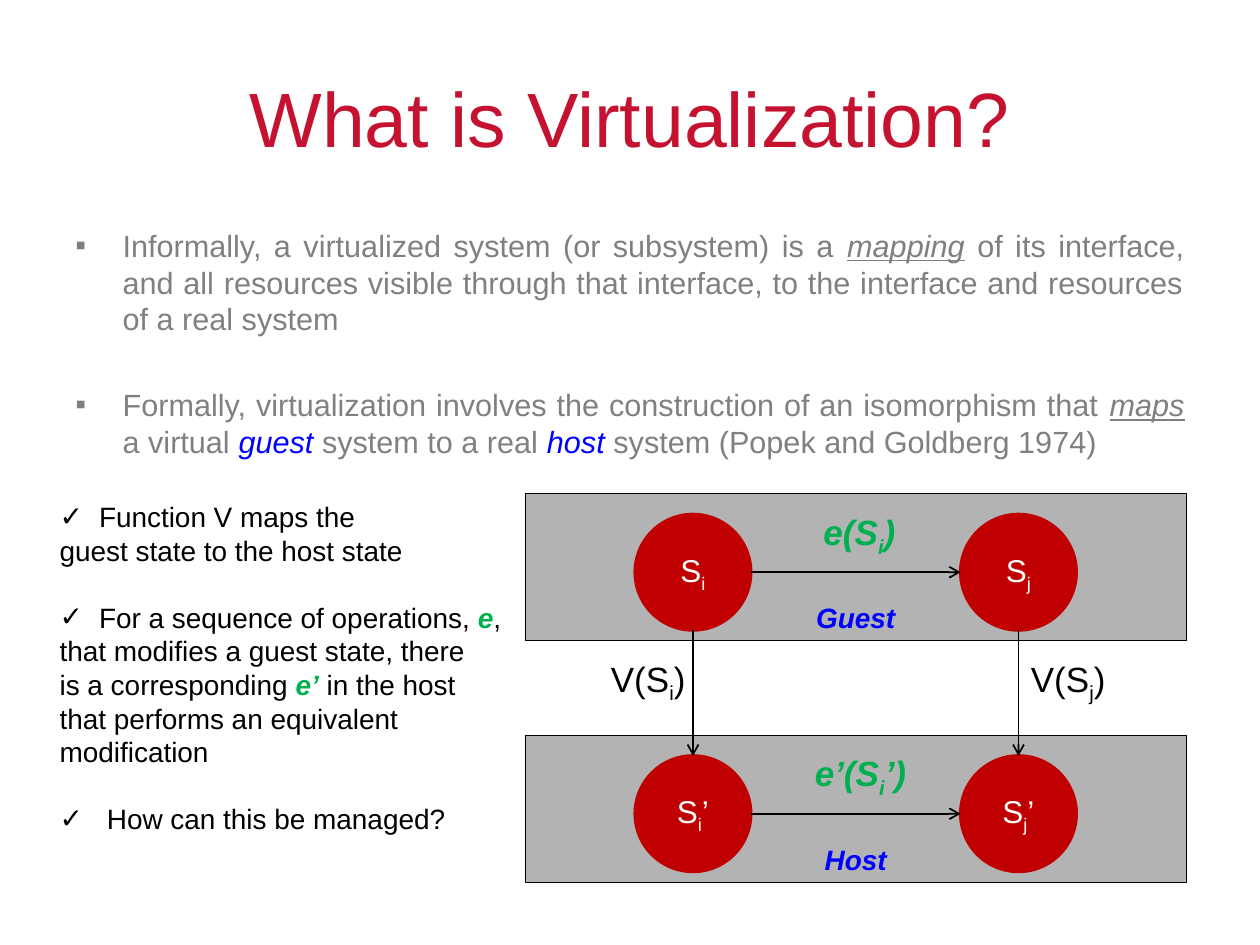
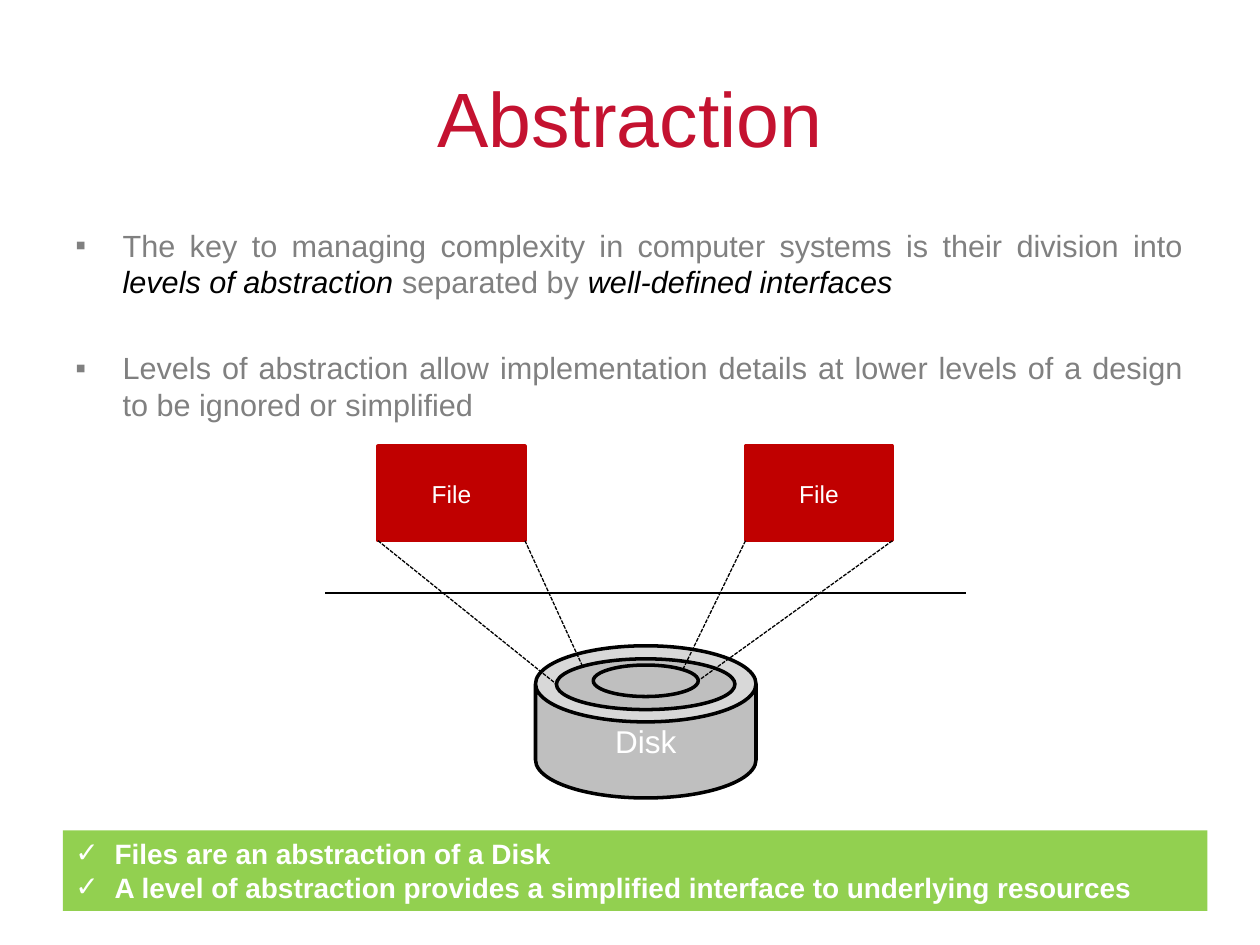
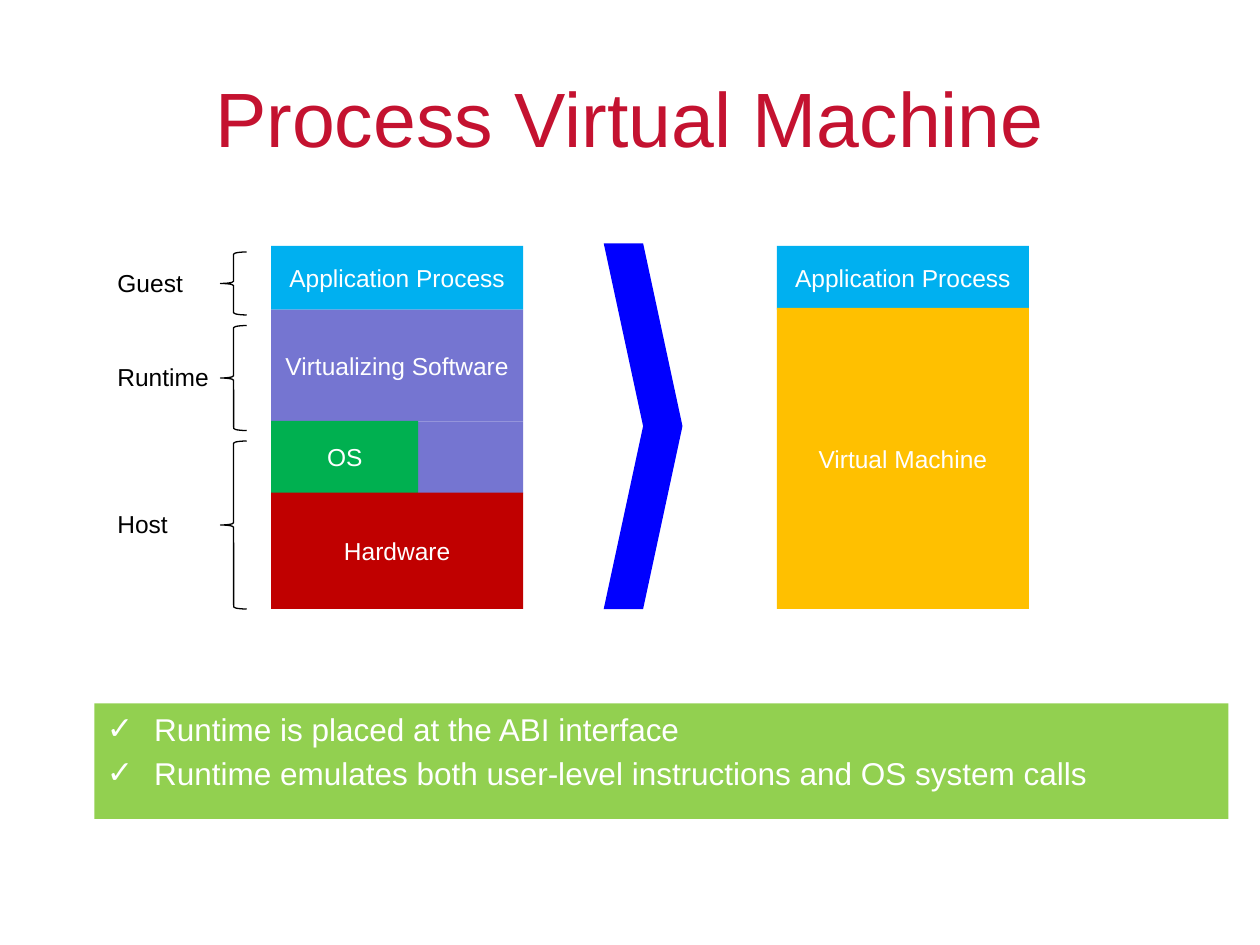
from lxml import etree
from pptx import Presentation
from pptx.dml.color import RGBColor
from pptx.enum.dml import MSO_LINE
from pptx.enum.shapes import MSO_CONNECTOR, MSO_SHAPE
from pptx.enum.text import MSO_ANCHOR, PP_ALIGN
from pptx.oxml.ns import qn
from pptx.util import Pt

LEFT, CENTER, JUSTIFY = PP_ALIGN.LEFT, PP_ALIGN.CENTER, PP_ALIGN.JUSTIFY
TOP, MIDDLE, BOTTOM = MSO_ANCHOR.TOP, MSO_ANCHOR.MIDDLE, MSO_ANCHOR.BOTTOM
RECTANGLE, OVAL, CAN = MSO_SHAPE.RECTANGLE, MSO_SHAPE.OVAL, MSO_SHAPE.CAN
BRACE, CHEVRON = MSO_SHAPE.LEFT_BRACE, MSO_SHAPE.CHEVRON
STRAIGHT = MSO_CONNECTOR.STRAIGHT
DASH = MSO_LINE.SQUARE_DOT

FONT = "Arial"
TITLE_RED, RED, GREEN, LIME = "C41230", "C00000", "00B050", "92D050"
BLUE, SKY, VIOLET, AMBER = "0000FF", "00B0F0", "7575D1", "FFC000"
BLACK, WHITE, TEXT_GRAY = "000000", "FFFFFF", "808080"
PANEL_GRAY, DISK_GRAY = "B3B3B3", "BFBFBF"

color_of = RGBColor.from_string


def write(box, *spans, size=14, color=WHITE, bold=False, italic=False,
          align=CENTER, bullet=None, indent=0, before=0):
    """Append a paragraph; a span is a string or a (string, overrides) pair."""
    para = box.text_frame.paragraphs[0]
    if para.runs:
        para = box.text_frame.add_paragraph()
    para.alignment = align
    para.space_before = Pt(before)
    if bullet:
        properties = para._p.get_or_add_pPr()
        properties.set("marL", str(Pt(indent)))
        properties.set("indent", str(-Pt(indent)))
        etree.SubElement(properties, qn("a:buFont"), typeface=FONT)
        etree.SubElement(properties, qn("a:buChar"), char=bullet)
    for item in spans:
        text, changes = (item, {}) if isinstance(item, str) else item
        span = para.add_run()
        span.text = text
        span.font.name = FONT
        span.font.size = Pt(size)
        span.font.color.rgb = color_of(changes.get("color", color))
        span.font.bold = changes.get("bold", bold)
        span.font.italic = changes.get("italic", italic)
        span.font.underline = changes.get("underline", False)
        if changes.get("subscript"):
            span.font._element.set("baseline", "-25000")


def add_block(page, kind, left, top, width, height, fill=None, line=None, weight=2,
              anchor=MIDDLE):
    block = page.shapes.add_shape(kind, Pt(left), Pt(top), Pt(width), Pt(height))
    block.shadow.inherit = False
    if fill:
        block.fill.solid()
        block.fill.fore_color.rgb = color_of(fill)
    else:
        block.fill.background()
    if line:
        block.line.color.rgb = color_of(line)
        block.line.width = Pt(weight)
    else:
        block.line.fill.background()
    block.text_frame.word_wrap = True
    block.text_frame.vertical_anchor = anchor
    return block


SUB_I, SUB_J = ("i", {"subscript": True}), ("j", {"subscript": True})
KEY = {"italic": True, "underline": True}
BLUE_TERM = {"italic": True, "color": BLUE}
BLACK_TERM = {"italic": True, "color": BLACK}
GREEN_TERM = {"bold": True, "italic": True, "color": GREEN}

deck = Presentation()
deck.slide_width, deck.slide_height = Pt(720), Pt(540)

# Titles
pages = []
for heading in ("What is Virtualization?", "Abstraction", "Process Virtual Machine"):
    page = deck.slides.add_slide(deck.slide_layouts[5])
    title = page.shapes.title
    title.left, title.top, title.width, title.height = Pt(36), Pt(21.5), Pt(648), Pt(90)
    title.text_frame.vertical_anchor = MIDDLE
    write(title, heading, size=44, color=TITLE_RED)
    pages.append(page)
mapping_page, disk_page, process_page = pages

# Body text of the first two slides
bodies = [
    (mapping_page, 342, [
        ["Informally, a virtualized system (or subsystem) is a ", ("mapping", KEY),
         " of its interface, and all resources visible through that interface, "
         "to the interface and resources of a real system"],
        ["Formally, virtualization involves the construction of an isomorphism that ",
         ("maps", KEY), " a virtual ", ("guest ", BLUE_TERM), "system to a real ",
         ("host ", BLUE_TERM), "system (Popek and Goldberg 1974)"],
    ]),
    (disk_page, 138, [
        ["The key to managing complexity in computer systems is their division into ",
         ("levels of abstraction ", BLACK_TERM), "separated by ",
         ("well-defined interfaces", BLACK_TERM)],
        ["Levels of abstraction allow implementation details at lower levels of a "
         "design to be ignored or simplified"],
    ]),
]
for page, height, paragraphs in bodies:
    body = page.shapes.add_textbox(Pt(36), Pt(126), Pt(648), Pt(height))
    body.text_frame.word_wrap = True
    for index, spans in enumerate(paragraphs):
        write(body, *spans, size=17.5, color=TEXT_GRAY, align=JUSTIFY, bullet="▪",
              indent=27, before=28 * index)

# Slide 1: guest and host state machines
STATE_SIZE = 66
STATE_LEFTS = (363, 549)
for name, panel_top, prime in (("Guest", 282, []), ("Host", 420, ["’"])):
    panel = add_block(mapping_page, RECTANGLE, 300, panel_top, 378, 84, PANEL_GRAY,
                      BLACK, 0.25, BOTTOM)
    write(panel, name, size=16, color=BLUE, bold=True, italic=True)
    for left, subscript in zip(STATE_LEFTS, (SUB_I, SUB_J)):
        state = add_block(mapping_page, OVAL, left, panel_top + 12, STATE_SIZE,
                          STATE_SIZE, RED, RED)
        write(state, "S", subscript, *prime, size=18)

first_x, second_x = [left + STATE_SIZE / 2 for left in STATE_LEFTS]
arrows = [(x, 360, x, 432) for x in (first_x, second_x)]
arrows += [(STATE_LEFTS[0] + STATE_SIZE, y, STATE_LEFTS[1], y) for y in (327, 465)]
for ends in arrows:
    arrow = mapping_page.shapes.add_connector(STRAIGHT, *map(Pt, ends))
    arrow.line.color.rgb = color_of(BLACK)
    arrow.line.width = Pt(1)
    etree.SubElement(arrow.line._get_or_add_ln(), qn("a:tailEnd"), type="arrow")

operation = {"color": GREEN, "bold": True, "italic": True}
mapping = {"color": BLACK}
for left, top, width, spans, look in (
    (463.5, 288, 56, ["e(S", SUB_I, ")"], operation),
    (458.5, 426, 68, ["e’(S", SUB_I, "’)"], operation),
    (342, 372, 58, ["V(S", SUB_I, ")"], mapping),
    (582, 372, 58, ["V(S", SUB_J, ")"], mapping),
):
    label = mapping_page.shapes.add_textbox(Pt(left), Pt(top), Pt(width), Pt(31.5))
    label.text_frame.word_wrap = False
    write(label, *spans, size=20, align=LEFT, **look)

checklist = mapping_page.shapes.add_textbox(Pt(27), Pt(282), Pt(274.5), Pt(201))
checklist.text_frame.word_wrap = False
for spans, bullet, indent, before in (
    (["Function V maps the"], "✓", 22.5, 0),
    (["guest state to the host state"], None, 0, 0),
    (["For a sequence of operations, ", ("e", GREEN_TERM), ","], "✓", 22.5, 19.2),
    (["that modifies a guest state, there"], None, 0, 0),
    (["is a corresponding ", ("e’", GREEN_TERM), " in the host"], None, 0, 0),
    (["that performs an equivalent"], None, 0, 0),
    (["modification"], None, 0, 0),
    (["How can this be managed?"], "✓", 27, 19.2),
):
    write(checklist, *spans, size=16, color=BLACK, align=LEFT, bullet=bullet,
          indent=indent, before=before)

# Slide 2: files projected onto a disk
for left in (216, 426):
    write(add_block(disk_page, RECTANGLE, left, 255, 84, 54, RED, RED), "File")

disk = add_block(disk_page, CAN, 306, 369, 126, 87, DISK_GRAY, BLACK)
disk.adjustments[0] = 0.5
write(disk, "Disk", size=18)
for top, width, height in ((376.5, 102, 29), (380, 60, 18)):
    add_block(disk_page, OVAL, 369 - width / 2, top, width, height, DISK_GRAY, BLACK)

for ends, weight, dash in (
    ((186, 339, 552, 339), 1, None),
    ((216, 309, 318, 391), 0.75, DASH),
    ((300, 309, 333, 381), 0.75, DASH),
    ((426, 309, 390, 383), 0.75, DASH),
    ((510, 309, 399, 389), 0.75, DASH),
):
    line = disk_page.shapes.add_connector(STRAIGHT, *map(Pt, ends))
    line.line.color.rgb = color_of(BLACK)
    line.line.width = Pt(weight)
    if dash:
        line.line.dash_style = dash

# Slide 3: software stack and the virtual machine it forms
for name, top, height, width in (("Guest", 144, 36, 52), ("Runtime", 186, 60, 67),
                                 ("Host", 252, 96, 44)):
    add_block(process_page, BRACE, 126, top, 15, height, None, BLACK, 0.75)
    label = process_page.shapes.add_textbox(
        Pt(60), Pt(top + height / 2 - 12.5), Pt(width), Pt(24.5))
    label.text_frame.word_wrap = False
    write(label, name, color=BLACK, align=LEFT)

for name, left, top, width, height, fill in (
    ("Application Process", 155, 140.5, 144, 36.5, SKY),
    ("Virtualizing Software", 155, 177, 144, 64, VIOLET),
    (None, 239, 241, 60, 41, VIOLET),
    ("OS", 155, 240.5, 84, 41.5, GREEN),
    ("Hardware", 155, 281.5, 144, 66.5, RED),
    ("Application Process", 444, 140.5, 144, 36.5, SKY),
    ("Virtual Machine", 444, 176, 144, 172, AMBER),
):
    layer = add_block(process_page, RECTANGLE, left, top, width, height, fill)
    if name:
        write(layer, name)
add_block(process_page, CHEVRON, 345, 139, 45, 209, BLUE)

# Green summary banners
for page, place, lines, look, gap in (
    (disk_page, (36, 474.5, 654, 46),
     ["Files are an abstraction of a Disk",
      "A level of abstraction provides a simplified interface to underlying resources"],
     {"size": 16, "bold": True, "indent": 22.5, "align": LEFT}, 0),
    (process_page, (54, 402, 648, 66),
     ["Runtime is placed at the ABI interface",
      "Runtime emulates both user-level instructions and OS system calls"],
     {"size": 18, "indent": 27, "align": JUSTIFY}, 3.6),
):
    banner = add_block(page, RECTANGLE, *place, LIME, anchor=TOP)
    for index, text in enumerate(lines):
        write(banner, text, bullet="✓", before=gap * index, **look)

# Connectors carry no shadow
for page in pages:
    for connector in page.element.iter(qn("p:cxnSp")):
        etree.SubElement(connector.spPr, qn("a:effectLst"))

deck.save("out.pptx")
